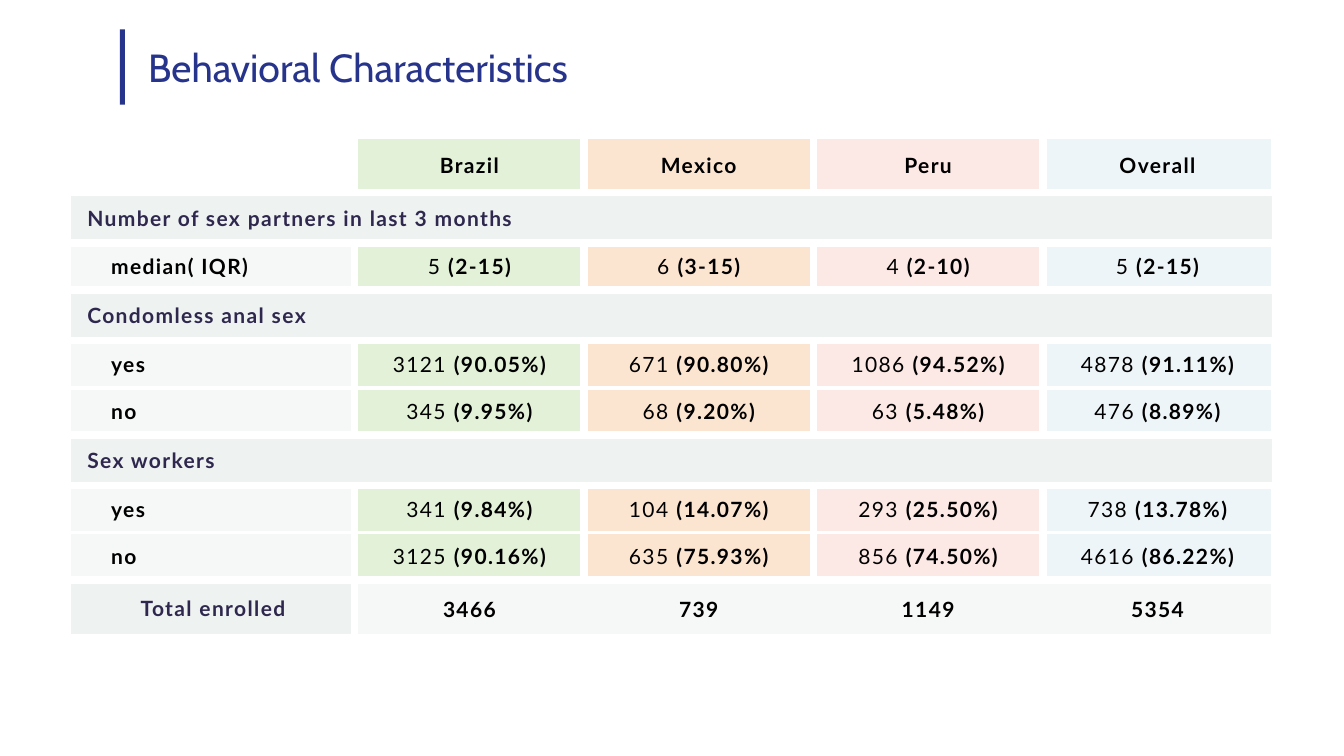
from lxml.etree import SubElement
from pptx import Presentation
from pptx.dml.color import RGBColor
from pptx.enum.shapes import MSO_SHAPE
from pptx.enum.text import MSO_ANCHOR, PP_ALIGN
from pptx.oxml.ns import qn
from pptx.util import Cm, Pt

NAVY, PLUM, BLACK, WHITE = "27348B", "2F284E", "000000", "FFFFFF"
BAND, PALE = "EEF2F1", "F6F8F7"
TINTS = ["E2F1D7", "FCE5D0", "FCE8E4", "EEF5F8"]
WIDTHS = [7.14] + [5.78] * 4
HEIGHTS = {"head": 1.35, "group": 1.27, "item": 1.19, "total": 1.45}
WIDE, THIN, EDGE = 6, 3, 2.25

# Each row: kind, label, values; a "yes" row is joined to the "no" row below it.
ROWS = [
    ("head", "", ["Brazil", "Mexico", "Peru", "Overall"]),
    ("group", "Number of sex partners in last 3 months", []),
    ("item", "median( IQR)", ["5 (2-15)", "6 (3-15)", "4 (2-10)", "5 (2-15)"]),
    ("group", "Condomless anal sex", []),
    ("item", "yes", ["3121 (90.05%)", "671 (90.80%)", "1086 (94.52%)", "4878 (91.11%)"]),
    ("item", "no", ["345 (9.95%)", "68 (9.20%)", "63 (5.48%)", "476 (8.89%)"]),
    ("group", "Sex workers", []),
    ("item", "yes", ["341 (9.84%)", "104 (14.07%)", "293 (25.50%)", "738 (13.78%)"]),
    ("item", "no", ["3125 (90.16%)", "635 (75.93%)", "856 (74.50%)", "4616 (86.22%)"]),
    ("total", "Total enrolled", ["3466", "739", "1149", "5354"]),
]


def color(code):
    return RGBColor.from_string(code)


class Page:
    def __init__(self, deck):
        self.slide = deck.slides.add_slide(deck.slide_layouts[5])
        self.head, self.body, self.size = "Cabin", "Lato", Pt(15)

    def title(self, text, left, top, width, height):
        box = self.slide.shapes.title
        box.left, box.top, box.width, box.height = map(Cm, (left, top, width, height))
        frame = box.text_frame
        frame.text = text
        frame.vertical_anchor = MSO_ANCHOR.MIDDLE
        para = frame.paragraphs[0]
        para.alignment = PP_ALIGN.LEFT
        para.font.name, para.font.size = self.head, Pt(28)
        para.font.color.rgb = color(NAVY)

    def bar(self, left, top, width, height):
        shape = self.slide.shapes.add_shape(
            MSO_SHAPE.RECTANGLE, *map(Cm, (left, top, width, height)))
        shape.shadow.inherit = False
        shape.fill.solid()
        shape.fill.fore_color.rgb = color(NAVY)
        shape.line.fill.background()

    def borders(self, cell, left, right, top, bottom):
        """Draw white borders with widths in points; zero means no line."""
        props = cell._tc.get_or_add_tcPr()
        sides = zip(("a:lnL", "a:lnR", "a:lnT", "a:lnB"), (left, right, top, bottom))
        for spot, (tag, width) in enumerate(sides):
            line = SubElement(props, qn(tag), w=str(Pt(width)))
            if width:
                SubElement(SubElement(line, qn("a:solidFill")), qn("a:srgbClr"), val=WHITE)
            else:
                SubElement(line, qn("a:noFill"))
            props.insert(spot, line)

    def label(self, cell, text, ink, align, pads):
        """Put text in a cell; a bracketed share after a count is bold."""
        cell.vertical_anchor = MSO_ANCHOR.MIDDLE
        cell.margin_left, cell.margin_top, cell.margin_right, cell.margin_bottom = map(Cm, pads)
        para = cell.text_frame.paragraphs[0]
        para.alignment = align
        font = para.font
        font.name, font.size, font.color.rgb = self.body, self.size, color(ink)
        para._p.pPr.find(qn("a:defRPr")).set("spc", "100")
        count, mark, share = text.partition(" (")
        if mark:
            para.add_run().text = count + " "
            run = para.add_run()
            run.text = "(" + share
            run.font.bold = True
        else:
            font.bold = True
            para.add_run().text = text

    def table(self, rows, left, top):
        tall = [HEIGHTS[kind] for kind, _, _ in rows]
        grid = self.slide.shapes.add_table(
            len(rows), len(WIDTHS), Cm(left), Cm(top), Cm(sum(WIDTHS)), Cm(sum(tall))).table
        grid.first_row = grid.horz_banding = False
        for column, width in zip(grid.columns, WIDTHS):
            column.width = Cm(width)
        for line, height in zip(grid.rows, tall):
            line.height = Cm(height)
        for r, (kind, name, values) in enumerate(rows):
            if kind == "group":
                grid.cell(r, 0).merge(grid.cell(r, len(WIDTHS) - 1))
            for c in range(len(WIDTHS)):
                self.fill(grid.cell(r, c), kind, name, values, c)

    def fill(self, cell, kind, name, values, c):
        """Style one cell by its row kind and column, then set its text."""
        last = len(WIDTHS) - 1
        joined = kind == "group" or kind == "total" and c > 0
        self.borders(
            cell,
            0 if c == 0 or kind == "group" or joined and c > 1 else WIDE,
            EDGE if c == last else 0 if joined else WIDE,
            0 if kind == "head" else THIN if name == "no" else WIDE,
            THIN if name == "yes" else WIDE)
        if kind == "head" and c == 0:
            cell.fill.background()
            return
        cell.fill.solid()
        if kind == "group" or kind == "total" and c == 0:
            shade = BAND
        else:
            shade = PALE if kind == "total" or c == 0 else TINTS[c - 1]
        cell.fill.fore_color.rgb = color(shade)
        if c > 0:
            if values:
                pads = (0.25, 0.3, 0.25, 0.3) if kind == "head" else (0.02, 0.02, 0.02, 0)
                self.label(cell, values[c - 1], BLACK, PP_ALIGN.CENTER, pads)
        elif kind == "total":
            self.label(cell, name, PLUM, PP_ALIGN.CENTER, (0, 0, 0, 0))
        else:
            ink, inset = (PLUM, 0.4) if kind == "group" else (BLACK, 1)
            self.label(cell, name, ink, PP_ALIGN.LEFT, (inset, 0.02, 0.02, 0))


def main():
    deck = Presentation()
    deck.slide_width, deck.slide_height = Cm(33.87), Cm(19.05)
    page = Page(deck)
    page.bar(3.02, 0.74, 0.13, 1.9)
    page.table(ROWS, 1.8, 3.5)
    page.title("Behavioral Characteristics", 3.48, 1.1, 14.53, 1.17)
    deck.save("out.pptx")


if __name__ == "__main__":
    main()
